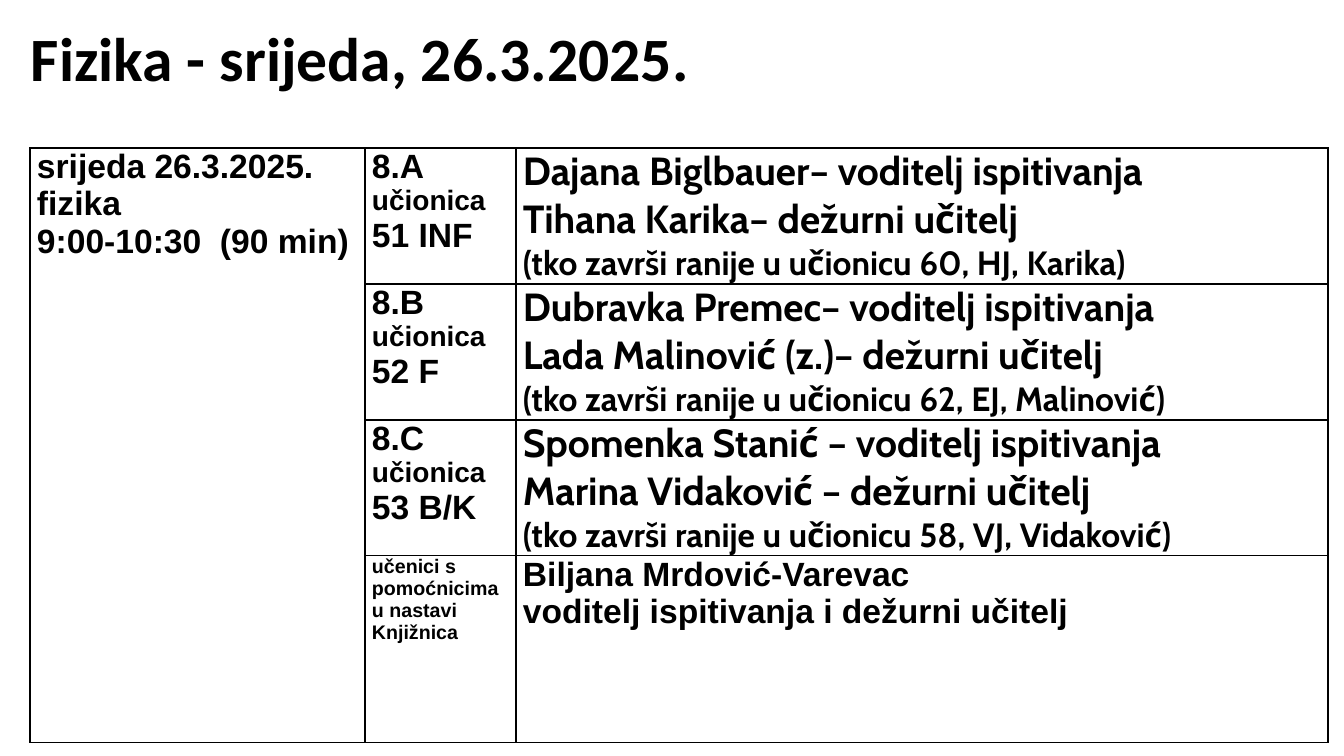
from dataclasses import dataclass

from lxml.etree import SubElement
from pptx import Presentation
from pptx.dml.color import RGBColor
from pptx.enum.text import MSO_ANCHOR
from pptx.oxml.ns import qn
from pptx.util import Pt

EMU_PER_PX = 12192000 / 1344


@dataclass(frozen=True)
class Theme:
    ink: str = "000000"
    title_font: str = "Calibri"
    body_font: str = "Arial"
    staff_font: str = "Cabin"
    title: int = 44
    staff: int = 28
    body: int = 24
    room: int = 20
    note: int = 14
    border: int = 1


THEME = Theme()

EXAM = ["srijeda 26.3.2025.", "fizika", "9:00-10:30  (90 min)"]
CLASSES = [
    ("8.A", "51 INF", "Dajana Biglbauer–", "Tihana Karika–", "60, HJ, Karika"),
    ("8.B", "52 F", "Dubravka Premec–", "Lada Malinović (z.)–", "62, EJ, Malinović"),
    ("8.C", "53 B/K", "Spomenka Stanić –", "Marina Vidaković –", "58, VJ, Vidaković"),
]
ASSISTED = ["učenici s pomoćnicima u nastavi", "Knjižnica"]
LIBRARY_STAFF = ["Biljana Mrdović-Varevac", "voditelj ispitivanja i dežurni učitelj"]

TITLE_BOX = (21, 13, 1102, 98)
TABLE_BOX = (30, 148, 1298, 595)
COLUMN_WIDTHS = (335, 151, 812)
CLASS_ROW_HEIGHT = 136


def px(length):
    return round(length * EMU_PER_PX)


def set_all(target, values):
    for name, value in values.items():
        setattr(target, name, value)


def write_lines(frame, lines, font):
    for index, (text, size) in enumerate(lines):
        paragraph = frame.add_paragraph() if index else frame.paragraphs[0]
        run = paragraph.add_run()
        run.text = text
        set_all(run.font, {"name": font, "size": Pt(size), "bold": True})
        run.font.color.rgb = RGBColor.from_string(THEME.ink)


def add_borders(cell):
    properties = cell._tc.get_or_add_tcPr()
    for side in ("lnL", "lnR", "lnT", "lnB"):
        line = SubElement(properties, qn(f"a:{side}"), w=str(Pt(THEME.border)))
        fill = SubElement(line, qn("a:solidFill"))
        SubElement(fill, qn("a:srgbClr"), val=THEME.ink)


def fill_cell(cell, lines, font=THEME.body_font):
    set_all(cell, {"margin_left": px(7), "margin_right": px(7),
                   "margin_top": 0, "margin_bottom": 0})
    write_lines(cell.text_frame, lines, font)


def add_title(slide, box):
    frame = slide.shapes.add_textbox(*map(px, box)).text_frame
    set_all(frame, {"word_wrap": True, "vertical_anchor": MSO_ANCHOR.MIDDLE})
    write_lines(frame, [("Fizika - srijeda, 26.3.2025.", THEME.title)], THEME.title_font)
    frame.paragraphs[0].line_spacing = 0.9


def add_schedule(slide, box):
    row_count = len(CLASSES) + 1
    schedule = slide.shapes.add_table(
        row_count, len(COLUMN_WIDTHS), *map(px, box)).table
    set_all(schedule, {"first_row": False, "horz_banding": False})
    for column, width in zip(schedule.columns, COLUMN_WIDTHS):
        column.width = px(width)
    library_height = box[3] - len(CLASSES) * CLASS_ROW_HEIGHT
    heights = [CLASS_ROW_HEIGHT] * len(CLASSES) + [library_height]
    for row, height in zip(schedule.rows, heights):
        row.height = px(height)
    for cell in schedule.iter_cells():
        add_borders(cell)
        cell.fill.background()

    schedule.cell(0, 0).merge(schedule.cell(row_count - 1, 0))
    fill_cell(schedule.cell(0, 0), [(text, THEME.body) for text in EXAM])
    for row, (group, room, leader, assistant, next_room) in enumerate(CLASSES):
        fill_cell(schedule.cell(row, 1), [
            (group, THEME.body), ("učionica", THEME.room), (room, THEME.body)])
        fill_cell(schedule.cell(row, 2), [
            (f"{leader} voditelj ispitivanja", THEME.staff),
            (f"{assistant} dežurni učitelj", THEME.staff),
            (f"(tko završi ranije u učionicu {next_room})", THEME.body),
        ], THEME.staff_font)
    library_row = row_count - 1
    fill_cell(schedule.cell(library_row, 1), [(text, THEME.note) for text in ASSISTED])
    fill_cell(schedule.cell(library_row, 2), [(text, THEME.body) for text in LIBRARY_STAFF])


def main():
    deck = Presentation()
    set_all(deck, {"slide_width": px(1344), "slide_height": px(756)})
    slide = deck.slides.add_slide(deck.slide_layouts[6])
    add_title(slide, TITLE_BOX)
    add_schedule(slide, TABLE_BOX)
    deck.save("out.pptx")


if __name__ == "__main__":
    main()
